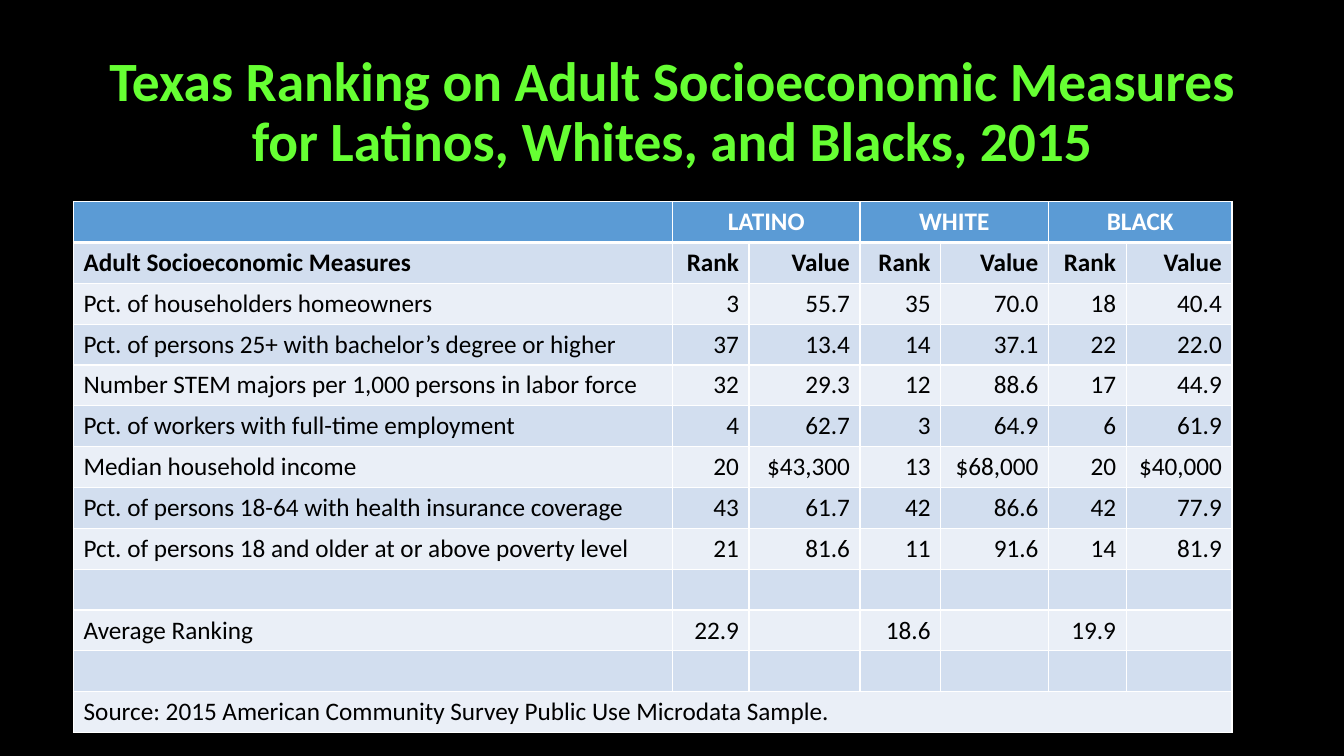
from dataclasses import dataclass

from lxml import etree
from pptx import Presentation
from pptx.dml.color import RGBColor
from pptx.enum.text import MSO_ANCHOR, PP_ALIGN
from pptx.oxml.ns import qn
from pptx.slide import Slide
from pptx.table import _Cell
from pptx.text.text import _Paragraph
from pptx.util import Pt

PX = 9144
LEFT, CENTER, RIGHT = PP_ALIGN.LEFT, PP_ALIGN.CENTER, PP_ALIGN.RIGHT
MIDDLE = MSO_ANCHOR.MIDDLE
BLANK_LAYOUT = 6


@dataclass(frozen=True)
class Theme:
    font: str = "Calibri"
    background: str = "000000"
    title: str = "66FF33"
    text: str = "000000"
    light: str = "FFFFFF"
    header: str = "5B9BD5"
    bands: tuple[str, str] = ("EAEFF7", "D2DEEF")
    title_size: float = 39.6
    table_size: float = 18
    border: float = 1
    header_rule: float = 3


@dataclass(frozen=True)
class Box:
    left: int
    top: int
    width: int
    height: int

    def emu(self) -> tuple[int, int, int, int]:
        return self.left * PX, self.top * PX, self.width * PX, self.height * PX


@dataclass(frozen=True)
class Measure:
    label: str = ""
    figures: tuple[str, ...] = ("",) * 6


THEME = Theme()
TITLE_BOX = Box(92, 40, 1150, 145)
TABLE_BOX = Box(73, 200, 1150, 527)
COLUMN_WIDTHS = (594, 76, 110, 80, 107, 77, 105)
TITLE = "Texas Ranking on Adult Socioeconomic Measures for Latinos, Whites, and Blacks, 2015"
MEASURES = (
    Measure("", ("LATINO", "", "WHITE", "", "BLACK", "")),
    Measure("Adult Socioeconomic Measures", ("Rank", "Value") * 3),
    Measure("Pct. of householders homeowners", ("3", "55.7", "35", "70.0", "18", "40.4")),
    Measure("Pct. of persons 25+ with bachelor’s degree or higher",
            ("37", "13.4", "14", "37.1", "22", "22.0")),
    Measure("Number STEM majors per 1,000 persons in labor force",
            ("32", "29.3", "12", "88.6", "17", "44.9")),
    Measure("Pct. of workers with full-time employment",
            ("4", "62.7", "3", "64.9", "6", "61.9")),
    Measure("Median household income",
            ("20", "$43,300", "13", "$68,000", "20", "$40,000")),
    Measure("Pct. of persons 18-64 with health insurance coverage",
            ("43", "61.7", "42", "86.6", "42", "77.9")),
    Measure("Pct. of persons 18 and older at or above poverty level",
            ("21", "81.6", "11", "91.6", "14", "81.9")),
    Measure(),
    Measure("Average Ranking", ("22.9", "", "18.6", "", "19.9", "")),
    Measure(),
    Measure("Source: 2015 American Community Survey Public Use Microdata Sample."),
)


def add_run(paragraph: _Paragraph, text: str, size: float, color: str, bold: bool) -> None:
    run = paragraph.add_run()
    run.text = text
    run.font.name = THEME.font
    run.font.size = Pt(size)
    run.font.bold = bold
    run.font.color.rgb = RGBColor.from_string(color)


def add_title(slide: Slide) -> None:
    frame = slide.shapes.add_textbox(*TITLE_BOX.emu()).text_frame
    frame.word_wrap = True
    frame.vertical_anchor = MIDDLE
    paragraph = frame.paragraphs[0]
    paragraph.alignment = CENTER
    paragraph.line_spacing = 0.9
    add_run(paragraph, TITLE, THEME.title_size, THEME.title, True)


def set_borders(cell: _Cell, row: int) -> None:
    top = THEME.header_rule if row == 1 else THEME.border
    bottom = THEME.header_rule if row == 0 else THEME.border
    widths = {"a:lnL": THEME.border, "a:lnR": THEME.border, "a:lnT": top, "a:lnB": bottom}
    properties = cell._tc.get_or_add_tcPr()
    for side, width in widths.items():
        line = etree.SubElement(properties, qn(side), w=str(Pt(width)))
        fill = etree.SubElement(line, qn("a:solidFill"))
        etree.SubElement(fill, qn("a:srgbClr"), val=THEME.light)


def fill_cell(cell: _Cell, text: str, row: int, column: int) -> None:
    set_borders(cell, row)
    cell.fill.solid()
    color = THEME.header if row == 0 else THEME.bands[row % 2]
    cell.fill.fore_color.rgb = RGBColor.from_string(color)
    paragraph = cell.text_frame.paragraphs[0]
    if column == 0:
        paragraph.alignment = LEFT
    else:
        paragraph.alignment = CENTER if row == 0 else RIGHT
    if text:
        text_color = THEME.light if row == 0 else THEME.text
        add_run(paragraph, text, THEME.table_size, text_color, row < 2)
    else:
        size = str(int(THEME.table_size * 100))
        etree.SubElement(paragraph._p, qn("a:endParaRPr"), sz=size)


def add_measures_table(slide: Slide) -> None:
    frame = slide.shapes.add_table(len(MEASURES), len(COLUMN_WIDTHS), *TABLE_BOX.emu())
    table = frame.table
    table.first_row = False
    table.horz_banding = False
    for column, width in zip(table.columns, COLUMN_WIDTHS):
        column.width = width * PX
    for row, measure in enumerate(MEASURES):
        table.rows[row].height = TABLE_BOX.height * PX // len(MEASURES)
        for column, text in enumerate((measure.label, *measure.figures)):
            fill_cell(table.cell(row, column), text, row, column)
    for column in range(1, len(COLUMN_WIDTHS), 2):
        table.cell(0, column).merge(table.cell(0, column + 1))
    last_row = len(MEASURES) - 1
    table.cell(last_row, 0).merge(table.cell(last_row, len(COLUMN_WIDTHS) - 1))


def main() -> None:
    presentation = Presentation()
    presentation.slide_width = 1333 * PX
    presentation.slide_height = 750 * PX
    slide = presentation.slides.add_slide(presentation.slide_layouts[BLANK_LAYOUT])
    slide.background.fill.solid()
    slide.background.fill.fore_color.rgb = RGBColor.from_string(THEME.background)
    add_title(slide)
    add_measures_table(slide)
    presentation.save("out.pptx")


if __name__ == "__main__":
    main()
